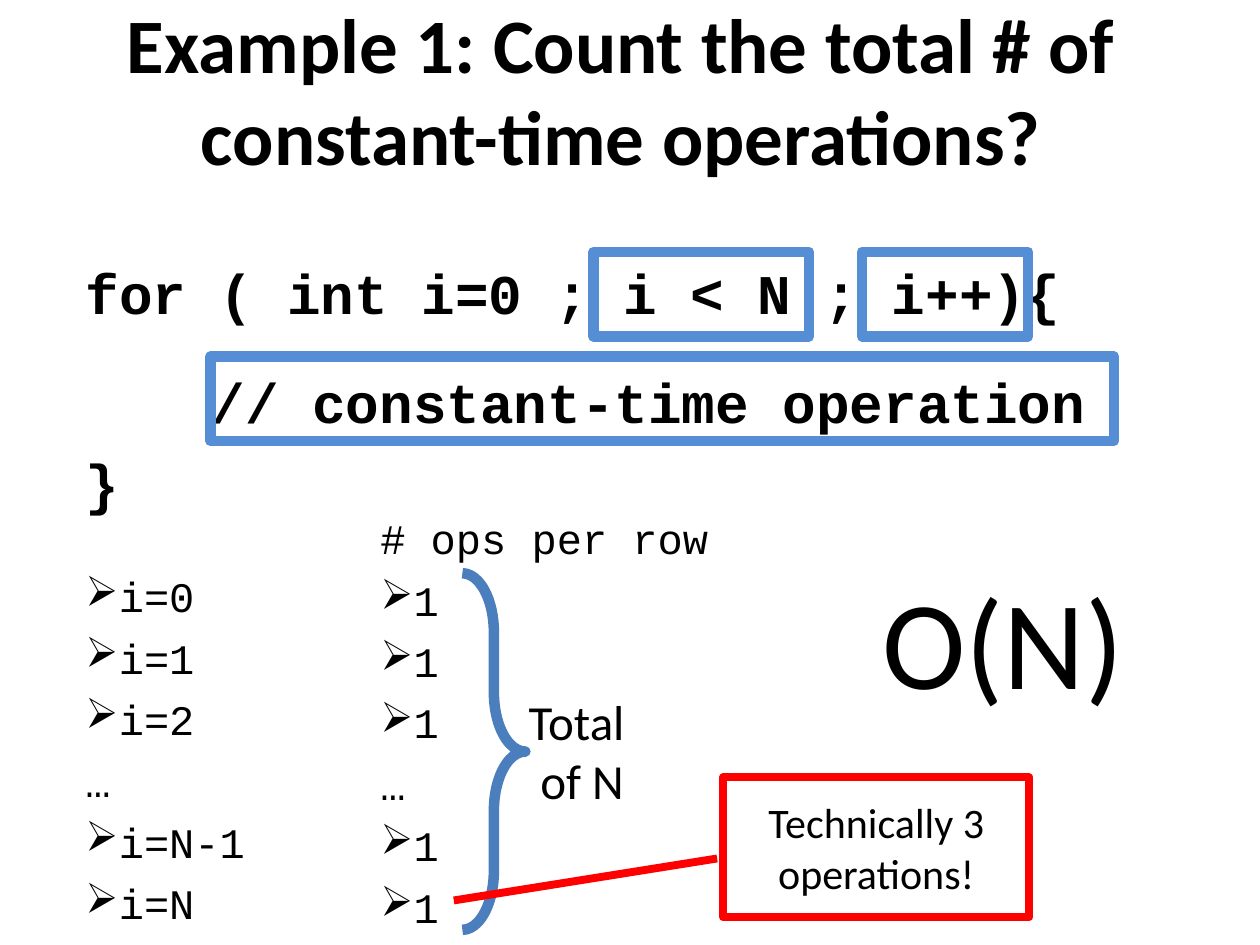
from dataclasses import dataclass

from lxml import etree
from pptx import Presentation
from pptx.dml.color import RGBColor
from pptx.enum.shapes import MSO_SHAPE
from pptx.enum.text import MSO_ANCHOR, MSO_AUTO_SIZE, PP_ALIGN
from pptx.oxml.ns import qn
from pptx.util import Inches, Pt

RECT = MSO_SHAPE.RECTANGLE
BRACE = MSO_SHAPE.RIGHT_BRACE
CALL = MSO_SHAPE.LINE_CALLOUT_1
LEFT = PP_ALIGN.LEFT
MID = PP_ALIGN.CENTER
TOP = MSO_ANCHOR.TOP
CENTER = MSO_ANCHOR.MIDDLE
FIXED = MSO_AUTO_SIZE.NONE

BLACK = "000000"
WHITE = "FFFFFF"
RED = "FF0000"
SKY = "558ED5"
BLUE = "4B7EBC"
SANS = "Calibri"
MONO = "Courier New"
HANG = 0.19


@dataclass
class Box:
    left: float
    top: float
    width: float
    height: float

    def place(self) -> tuple:
        return tuple(Inches(n) for n in (self.left, self.top, self.width, self.height))


@dataclass
class Line:
    text: str
    size: float
    font: str = SANS
    bold: bool = False
    align: PP_ALIGN = LEFT
    gap: float = 0
    margin: float = 0
    hang: float = 0
    bullet: str = ""


@dataclass
class Mark:
    kind: MSO_SHAPE
    box: Box
    color: str
    weight: float
    fill: str = ""
    adjust: tuple = ()


def paint(code: str) -> RGBColor:
    return RGBColor.from_string(code)


def write(frame, lines: list[Line], anchor=TOP) -> None:
    frame.word_wrap = True
    frame.auto_size = FIXED
    frame.vertical_anchor = anchor
    for n, line in enumerate(lines):
        para = frame.paragraphs[0] if n == 0 else frame.add_paragraph()
        para.text = line.text
        para.alignment = line.align
        para.space_before = Pt(line.gap)
        para.font.size = Pt(line.size)
        para.font.name = line.font
        para.font.bold = line.bold
        para.font.color.rgb = paint(BLACK)
        props = para._p.get_or_add_pPr()
        props.set("marL", str(Inches(line.margin)))
        props.set("indent", str(-Inches(line.hang)))
        if line.bullet:
            dot = etree.Element(qn("a:buChar"), char=line.bullet)
            props.insert_element_before(dot, "a:tabLst", "a:defRPr", "a:extLst")


def add_text(slide, box: Box, lines: list[Line]) -> None:
    write(slide.shapes.add_textbox(*box.place()).text_frame, lines)


def add_mark(slide, mark: Mark):
    shape = slide.shapes.add_shape(mark.kind, *mark.box.place())
    shape.shadow.inherit = False
    if mark.fill:
        shape.fill.solid()
        shape.fill.fore_color.rgb = paint(mark.fill)
    else:
        shape.fill.background()
    shape.line.color.rgb = paint(mark.color)
    shape.line.width = Pt(mark.weight)
    for n, value in enumerate(mark.adjust):
        shape.adjustments[n] = value
    return shape


def steps(names: list[str], first: float) -> list[Line]:
    return [
        Line(name, 24, MONO, gap=6.3 if n else first, margin=HANG, hang=HANG,
             bullet="" if name == "…" else "➢")
        for n, name in enumerate(names)
    ]


def code(text: str, gap: float, margin: float = 0) -> Line:
    return Line(text, 32, MONO, True, gap=gap, margin=margin)


def main() -> None:
    deck = Presentation()
    deck.slide_width = Inches(10)
    deck.slide_height = Inches(7.5)
    slide = deck.slides.add_slide(deck.slide_layouts[5])

    title = slide.shapes.title
    title.left, title.top, title.width, title.height = Box(0.5, 0.08, 9, 1.25).place()
    heading = "Example 1: Count the total # of \vconstant-time operations? "
    write(title.text_frame, [Line(heading, 44, bold=True, align=MID)], CENTER)

    loop = [
        code("for ( int i=0 ; i < N ; i++){", 8),
        code("// constant-time operation", 24, 1),
        code("}", 8),
    ]
    rows = ["i=0", "i=1", "i=2", "…", "i=N-1", "i=N"]
    add_text(slide, Box(0.58, 2, 9, 5.33), loop + steps(rows, 31.5))

    costs = ["…" if row == "…" else "1" for row in rows]
    head = Line("# ops per row", 24, MONO, gap=6.3)
    add_text(slide, Box(2.92, 4.02, 3.08, 3.08), [head] + steps(costs, 6.3))

    add_mark(slide, Mark(BRACE, Box(3.67, 4.55, 0.5, 2.83), BLUE, 6, adjust=(0.94, 0.5)))
    total = [Line(text, 28, align=MID) for text in ("Total ", "of N")]
    add_text(slide, Box(4.08, 5.44, 1.08, 1.04), total)
    add_text(slide, Box(6.67, 4.42, 2.58, 1.31), [Line("O(N)", 72, align=MID)])

    for left, top, width in ((4.71, 2, 1.71), (1.67, 2.83, 7.17), (6.84, 2, 1.32)):
        add_mark(slide, Mark(RECT, Box(left, top, width, 0.67), SKY, 6))

    note = add_mark(slide, Mark(CALL, Box(5.74, 6.17, 2.43, 1.11), RED, 4.5, WHITE,
                                (0.58, -0.02, 0.88, -0.88)))
    write(note.text_frame, [Line("Technically 3 operations!", 24, align=MID)], CENTER)

    deck.save("out.pptx")


if __name__ == "__main__":
    main()
